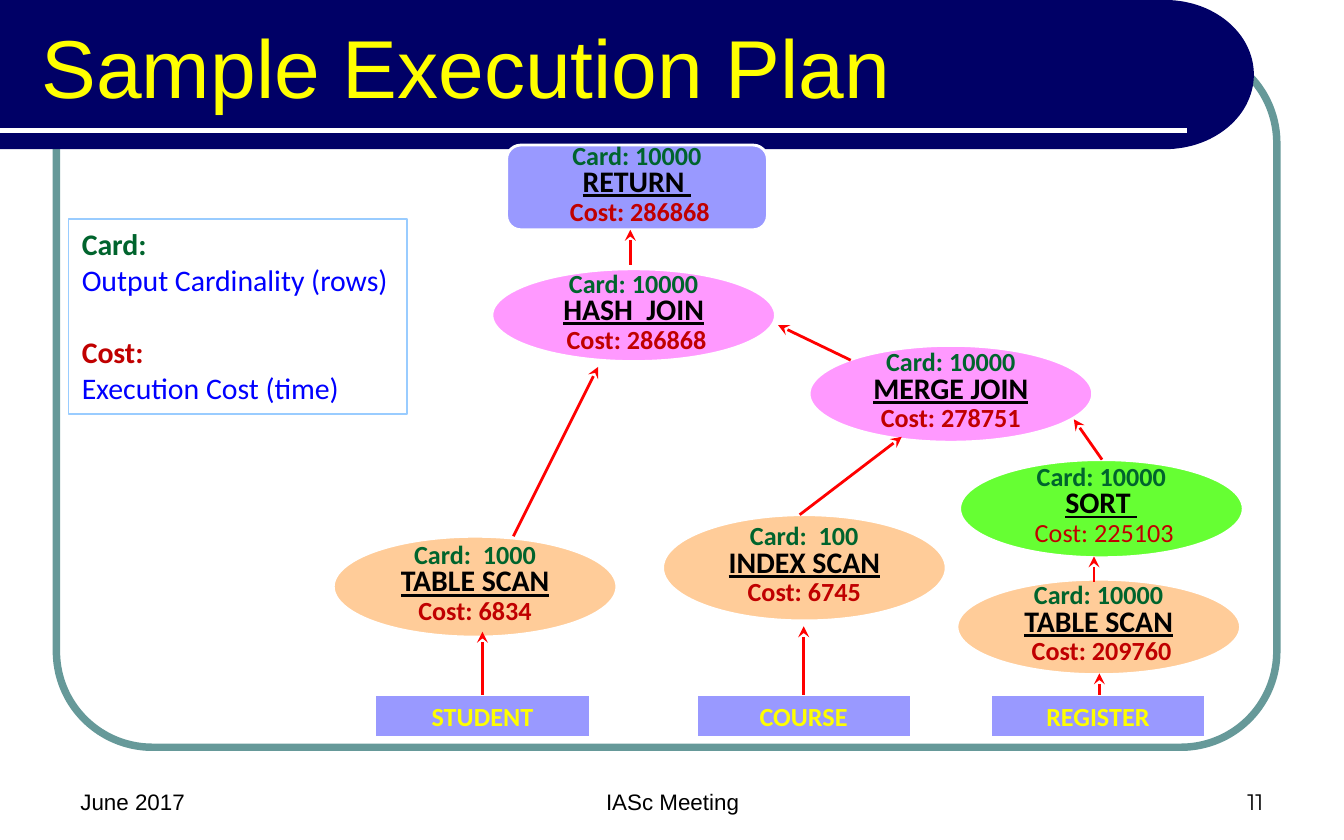
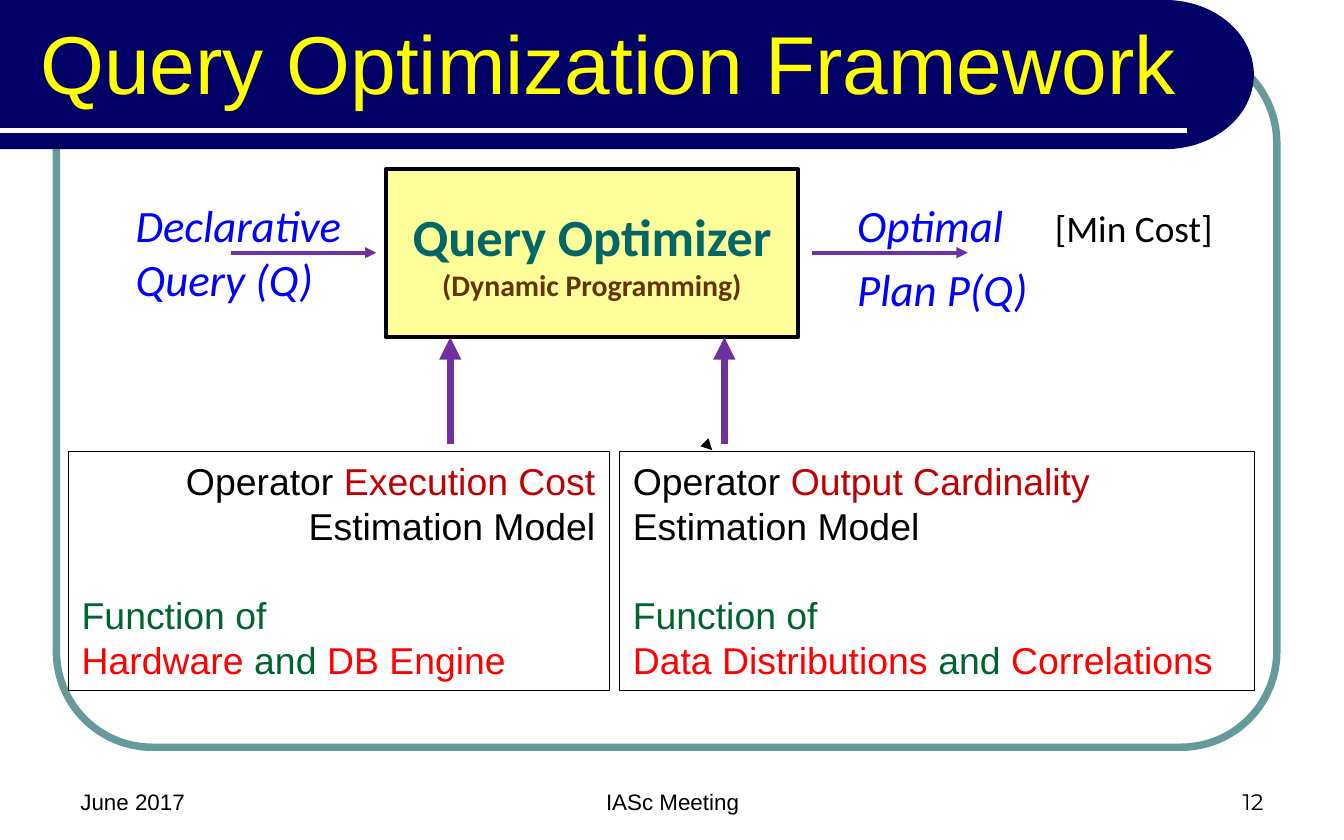
from dataclasses import dataclass
from math import cos, pi, sin

from lxml.etree import SubElement
from pptx import Presentation
from pptx.dml.color import RGBColor
from pptx.enum.shapes import MSO_CONNECTOR, MSO_SHAPE as Shape
from pptx.enum.text import MSO_ANCHOR as Anchor, MSO_AUTO_SIZE as AutoSize, PP_ALIGN as Align
from pptx.oxml.ns import qn
from pptx.util import Inches, Pt

COLORS = {
    "navy": "000066", "frame": "669999", "title": "FFFF00", "white": "FFFFFF",
    "black": "000000", "card": "00642D", "cost": "C00000", "blue": "0000FF",
    "red": "FF0000", "purple": "7030A0", "lavender": "9999FF", "pink": "FF99FF",
    "peach": "FFCC99", "green": "66FF33", "sky": "99CCFF", "cream": "FFFF99",
    "teal": "006666", "brown": "663300",
}


@dataclass
class Box:
    left: float
    top: float
    width: float
    height: float

    def inner(self, left, top, width, height):
        return Box(self.left + left, self.top + top, width, height)

    def point(self, x, y):
        return self.left + x, self.top + y

    def lengths(self):
        return [Inches(side) for side in (self.left, self.top, self.width, self.height)]


CONTENT = Box(0.5, 1, 9, 4.5)
FOOTER = Box(0.5, 5.69, 9, 0.42)


def color(name):
    return RGBColor.from_string(COLORS[name])


def place(shape, box):
    shape.left, shape.top, shape.width, shape.height = box.lengths()


def style_font(font, size, color_name, name="Calibri", bold=False, italic=False, underline=False):
    font.name, font.size = name, Pt(size)
    font.bold, font.italic, font.underline = bold, italic, underline
    font.color.rgb = color(color_name)


def write(shape, paragraphs, align=Align.LEFT, anchor=Anchor.TOP, wrap=True):
    """Fill a shape; each paragraph is a list of (text, font settings) runs."""
    frame = shape.text_frame
    frame.auto_size = AutoSize.NONE
    frame.word_wrap = wrap
    frame.vertical_anchor = anchor
    for index, runs in enumerate(paragraphs):
        paragraph = frame.add_paragraph() if index else frame.paragraphs[0]
        paragraph.alignment = align
        for text, settings in runs:
            run = paragraph.add_run()
            run.text = text
            style_font(run.font, **settings)
    return frame.paragraphs


def add_text(slide, box, paragraphs, **options):
    return write(slide.shapes.add_textbox(*box.lengths()), paragraphs, **options)


def add_block(slide, kind, box, fill=None, line="white", width=1.5):
    shape = slide.shapes.add_shape(kind, *box.lengths())
    shape.shadow.inherit = False
    if fill:
        shape.fill.solid()
        shape.fill.fore_color.rgb = color(fill)
    else:
        shape.fill.background()
    shape.line.color.rgb = color(line)
    shape.line.width = Pt(width)
    return shape


def add_line(slide, start, end, line, width, head=None):
    connector = slide.shapes.add_connector(
        MSO_CONNECTOR.STRAIGHT, *[Inches(value) for value in (*start, *end)])
    connector.line.color.rgb = color(line)
    connector.line.width = Pt(width)
    if head:
        SubElement(connector.line._get_or_add_ln(), qn("a:tailEnd"), type=head)
    SubElement(connector.element.spPr, qn("a:effectLst"))
    return connector


def add_band(slide, width=9.33, height=1.11, curve=0.66, steps=60):
    """Title band with a half-ellipse at its right end."""
    middle = height / 2
    angles = [-pi / 2 + pi * step / steps for step in range(steps + 1)]
    points = [(Inches(width - curve + curve * cos(angle)), Inches(middle + middle * sin(angle)))
              for angle in angles]
    builder = slide.shapes.build_freeform(0, 0)
    builder.add_line_segments(points + [(0, Inches(height))], close=True)
    band = builder.convert_to_shape()
    band.shadow.inherit = False
    band.fill.solid()
    band.fill.fore_color.rgb = color("navy")
    band.line.fill.background()
    return band


def decorate_layout(layout, slide):
    """Draw frame, band and rule once and move them to the layout."""
    for placeholder in list(layout.placeholders):
        if placeholder.placeholder_format.idx:
            layout.shapes.element.remove(placeholder.element)
    frame = add_block(slide, Shape.ROUNDED_RECTANGLE, Box(0.42, 0.35, 9.08, 5.21),
                      line="frame", width=4)
    frame.adjustments[0] = 0.137
    rule = add_line(slide, (0, 0.97), (8.83, 0.97), "white", 3)
    band = add_band(slide)
    title = layout.placeholders[0].element
    for part in (frame, band, rule):
        title.addprevious(part.element)


def add_title(slide, text, box):
    title = slide.shapes.title
    place(title, box)
    write(title, [[(text, dict(size=44, color_name="title", name="Arial"))]], anchor=Anchor.MIDDLE)


def add_footer(slide, number, box):
    parts = [("June 2017", 0, 2.33, Align.LEFT, "Arial"),
             ("IASc Meeting", 2.92, 3.17, Align.CENTER, "Arial"),
             (number, 6.67, 2.33, Align.RIGHT, "Montserrat")]
    for text, left, width, align, font in parts:
        add_text(slide, box.inner(left, 0, width, box.height),
                 [[(text, dict(size=12, color_name="black", name=font))]],
                 align=align, anchor=Anchor.BOTTOM)


def add_operator(slide, box, fill, card, name, cost, kind=Shape.OVAL, bold_cost=True):
    paragraphs = write(
        add_block(slide, kind, box, fill),
        [[(card, dict(size=14, color_name="card", bold=True))],
         [(name, dict(size=16, color_name="black", bold=True, underline=True))],
         [(cost, dict(size=14, color_name="cost", bold=bold_cost))]],
        align=Align.CENTER, anchor=Anchor.MIDDLE, wrap=False)
    for paragraph in paragraphs:
        paragraph.line_spacing = Pt(12)
        paragraph.space_before = Pt(3)


def add_legend(slide, box):
    shape = add_block(slide, Shape.RECTANGLE, box, line="sky", width=0.75)
    plain = dict(size=16, color_name="blue")
    paragraphs = write(shape, [
        [("Card:", dict(size=16, color_name="card", bold=True))],
        [("Output Cardinality (rows)", plain)],
        [("Cost:", dict(size=16, color_name="cost", bold=True))],
        [("Execution Cost (time)", plain)]])
    paragraphs[2].space_before = Pt(19.5)


def add_execution_plan(slide, box):
    # Operators of the plan tree
    add_operator(slide, box.inner(3.27, 0.08, 1.94, 0.63), "lavender", "Card: 10000",
                 "RETURN ", " Cost: 286868", kind=Shape.ROUNDED_RECTANGLE)
    operators = [
        (3.16, 1.00, 0.69, "pink", "Card: 10000", "HASH  JOIN", " Cost: 286868"),
        (1.98, 2.99, 0.75, "peach", "Card:  1000", "TABLE SCAN", "Cost: 6834"),
        (5.52, 1.57, 0.72, "pink", "Card: 10000", "MERGE JOIN", "Cost: 278751"),
        (6.62, 3.31, 0.71, "peach", "Card: 10000", "TABLE SCAN", " Cost: 209760"),
        (4.43, 2.83, 0.79, "peach", "Card:  100", "INDEX SCAN", "Cost: 6745"),
        (6.64, 2.42, 0.73, "green", "Card: 10000", "SORT ", " Cost: 225103"),
    ]
    for left, top, height, fill, card, name, cost in operators:
        add_operator(slide, box.inner(left, top, 2.11, height), fill, card, name, cost,
                     bold_cost=name != "SORT ")

    # Base tables
    for name, left in (("STUDENT", 2.29), ("COURSE", 4.68), ("REGISTER", 6.87)):
        table = add_block(slide, Shape.RECTANGLE, box.inner(left, 4.17, 1.6, 0.32), "lavender")
        write(table, [[(name, dict(size=14, color_name="title", bold=True))]],
              align=Align.CENTER, anchor=Anchor.MIDDLE)

    # Data flow, bottom to top
    flows = [
        ((3.09, 4.17), (3.09, 3.70)), ((5.48, 4.17), (5.48, 3.66)),
        ((7.68, 4.17), (7.68, 4.01)), ((7.64, 3.33), (7.64, 3.14)),
        ((7.70, 2.42), (7.49, 2.12)), ((5.45, 2.83), (6.21, 2.25)),
        ((5.83, 1.68), (5.29, 1.42)), ((3.32, 2.99), (3.95, 1.73)),
        ((4.19, 0.97), (4.19, 0.71)),
    ]
    for start, end in flows:
        add_line(slide, box.point(*start), box.point(*end), "red", 1.5, "stealth")
    add_legend(slide, box.inner(0.01, 0.63, 2.52, 1.45))


def add_model(slide, box, subject, function_runs, align):
    """Estimation model: heading lines, then what it is a function of."""
    def run(text, color_name):
        return text, dict(size=20, color_name=color_name, name="Arial")

    shape = add_block(slide, Shape.RECTANGLE, box, line="black", width=0.25)
    paragraphs = write(shape, [
        [run("Operator ", "black"), run(subject, "cost")],
        [run("Estimation Model", "black")],
        [run("Function of", "card")],
        [run(*part) for part in function_runs]])
    for paragraph in paragraphs[:2]:
        paragraph.alignment = align
    paragraphs[2].space_before = Pt(24)


def add_framework(slide, box):
    # Optimizer with its input and output
    italic = dict(size=24, color_name="blue", italic=True)
    add_line(slide, box.point(1.22, 0.88), box.point(2.3, 0.88), "purple", 2, "triangle")
    add_text(slide, box.inner(0.41, 0.42, 1.75, 0.91),
             [[("Declarative", italic)], [("Query (Q)", italic)]], wrap=False)
    optimizer = add_block(slide, Shape.RECTANGLE, box.inner(2.37, 0.26, 3.07, 1.25),
                          "cream", "black", 2)
    write(optimizer, [
        [("Query Optimizer", dict(size=28, color_name="teal", bold=True))],
        [("(Dynamic Programming)", dict(size=16, color_name="brown", bold=True))]],
        align=Align.CENTER, anchor=Anchor.MIDDLE, wrap=False)
    add_line(slide, box.point(5.54, 0.88), box.point(6.7, 0.88), "purple", 2, "triangle")
    result = add_text(slide, box.inner(5.78, 0.34, 2.89, 1.07), [
        [("Optimal\t", italic), ("[Min Cost]", dict(size=20, color_name="black"))],
        [("Plan P(Q)", italic)]])
    for paragraph in result:
        paragraph.line_spacing = 1.2
    tabs = SubElement(result[0]._p.get_or_add_pPr(), qn("a:tabLst"))
    SubElement(tabs, qn("a:tab"), pos=str(Inches(1.47)), algn="l")

    # Models that feed the optimizer
    add_model(slide, box.inner(0.01, 2.36, 4.02, 1.78), "Execution Cost",
              [("Hardware", "red"), (" and ", "card"), ("DB Engine", "red")], Align.RIGHT)
    add_model(slide, box.inner(4.11, 2.36, 4.72, 1.78), "Output Cardinality",
              [("Data Distributions ", "red"), ("and ", "card"), ("Correlations", "red")],
              Align.LEFT)
    for x in (2.85, 4.89):
        add_line(slide, box.point(x, 2.3), box.point(x, 1.51), "purple", 4, "triangle")
    add_line(slide, box.point(4.79, 2.34), box.point(4.8, 2.35), "black", 2, "triangle")


def main():
    presentation = Presentation()
    presentation.slide_width, presentation.slide_height = Inches(10), Inches(6.25)
    layout = presentation.slide_layouts.get_by_name("Title Only")
    pages = [
        ("Sample Execution Plan", Box(0.21, 0.07, 8.77, 0.83), "11", add_execution_plan),
        ("Query Optimization Framework", Box(0.2, 0.21, 9.8, 0.5), "12", add_framework),
    ]
    for index, (title, title_box, number, add_content) in enumerate(pages):
        slide = presentation.slides.add_slide(layout)
        if index == 0:
            decorate_layout(layout, slide)
        add_title(slide, title, title_box)
        add_content(slide, CONTENT)
        add_footer(slide, number, FOOTER)
    presentation.save("out.pptx")


if __name__ == "__main__":
    main()
